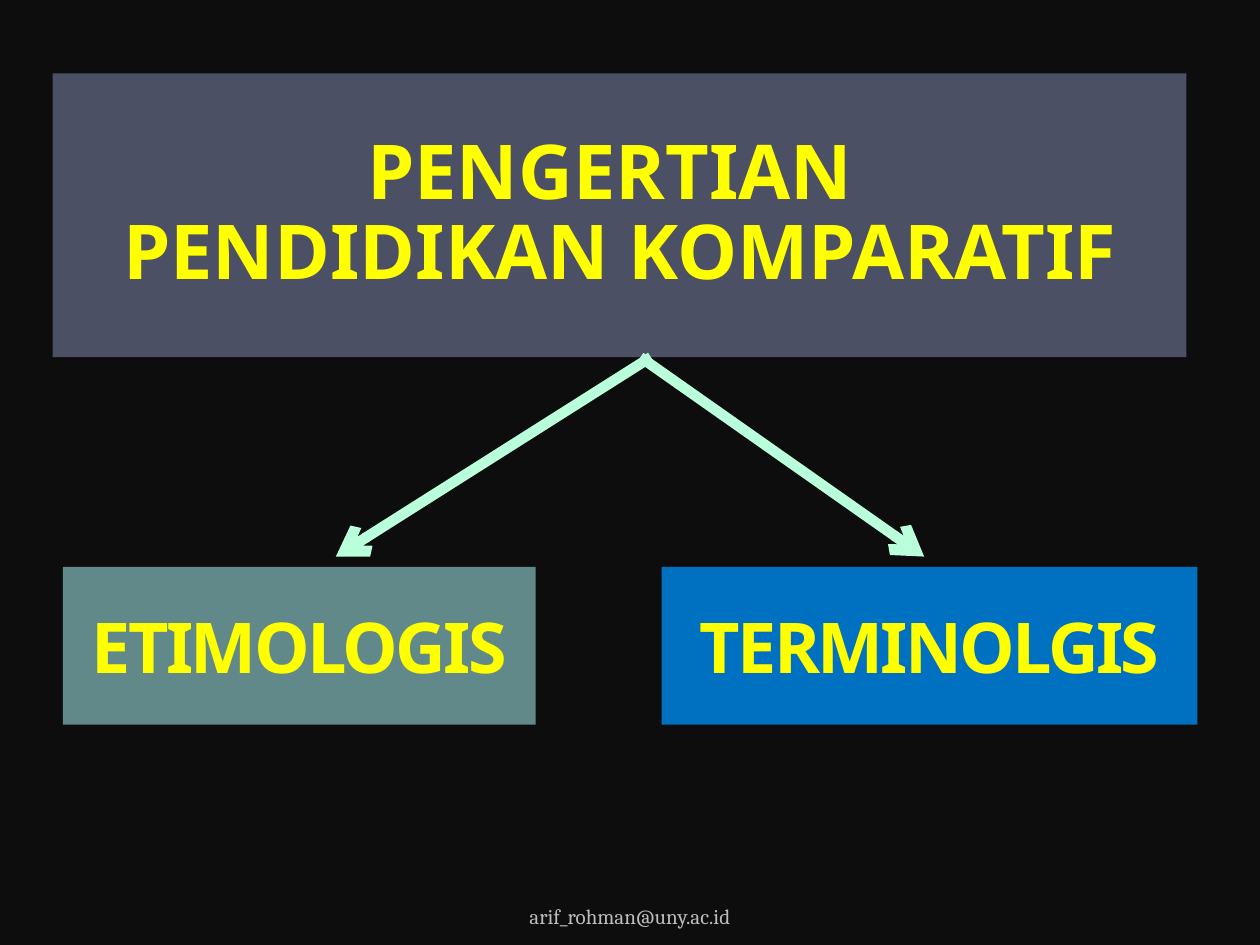
from lxml import etree
from pptx import Presentation
from pptx import util as u
from pptx.dml.color import RGBColor
from pptx.enum import shapes, text
from pptx.oxml import ns


def colour(hex_code):
    return RGBColor.from_string(hex_code)


class Deck:
    heading_font, footer_font = "Noto Sans", "Cambria"
    background, heading, arrow, muted = "0D0D0D", "FFFF00", "B9FFDC", "BDBDBD"

    def __init__(self):
        self.prs = Presentation()
        self.prs.slide_width, self.prs.slide_height = u.Cm(25.4), u.Cm(19.05)
        self.slide = self.prs.slides.add_slide(self.prs.slide_layouts[6])
        fill = self.slide.background.fill
        fill.solid()
        fill.fore_color.rgb = colour(self.background)

    def set_words(self, frame, words, font, size, hex_code, bold=False,
                  tracking=None, line_spacing=None):
        """Fill a frame with one centred paragraph; tracking is in points."""
        frame.word_wrap = True
        frame.text = words
        paragraph = frame.paragraphs[0]
        paragraph.alignment = text.PP_ALIGN.CENTER
        paragraph.line_spacing = line_spacing
        for run in paragraph.runs:
            run.font.name, run.font.size, run.font.bold = font, u.Pt(size), bold
            run.font.color.rgb = colour(hex_code)
            if tracking:
                run.font._element.set("spc", str(int(tracking * 100)))

    def panel(self, box, fill, words, size, **style):
        shape = self.slide.shapes.add_shape(
            shapes.MSO_SHAPE.RECTANGLE, *map(u.Cm, box))
        shape.shadow.inherit = False
        shape.fill.solid()
        shape.fill.fore_color.rgb = colour(fill)
        shape.line.fill.background()
        shape.text_frame.vertical_anchor = text.MSO_ANCHOR.MIDDLE
        self.set_words(shape.text_frame, words, self.heading_font, size,
                       self.heading, bold=True, **style)

    def branch(self, start, end):
        """Draw an arrow from start to end."""
        line = self.slide.shapes.add_connector(
            shapes.MSO_CONNECTOR.STRAIGHT, *map(u.Cm, start + end))
        line.line.color.rgb = colour(self.arrow)
        line.line.width = u.Pt(6)
        etree.SubElement(line.line._get_or_add_ln(), ns.qn("a:tailEnd"),
                         type="arrow")
        etree.SubElement(line._element.spPr, ns.qn("a:effectLst"))

    def footer(self, box, words):
        frame = self.slide.shapes.add_textbox(*map(u.Cm, box)).text_frame
        frame.vertical_anchor = text.MSO_ANCHOR.BOTTOM
        self.set_words(frame, words, self.footer_font, 12, self.muted)


def main():
    deck = Deck()
    deck.panel((1.06, 1.48, 22.86, 5.72), "4B5064",
               "PENGERTIAN \vPENDIDIKAN KOMPARATIF", 43.2, line_spacing=0.88)

    top, height = 11.43, 3.18
    for left, width, fill, meaning in (
        (1.27, 9.53, "61898A", "ETIMOLOGIS"),
        (13.34, 10.8, "0070C0", "TERMINOLGIS"),
    ):
        deck.panel((left, top, width, height), fill, meaning, 40, tracking=-1.5)

    title_bottom, arrow_tip = 7.2, 11.22
    for start_x, end_x in ((13.12, 6.77), (12.91, 18.63)):
        deck.branch((start_x, title_bottom), (end_x, arrow_tip))

    deck.footer((8.68, 17.83, 8.04, 1.02), "arif_rohman@uny.ac.id")
    deck.prs.save("out.pptx")


if __name__ == "__main__":
    main()
